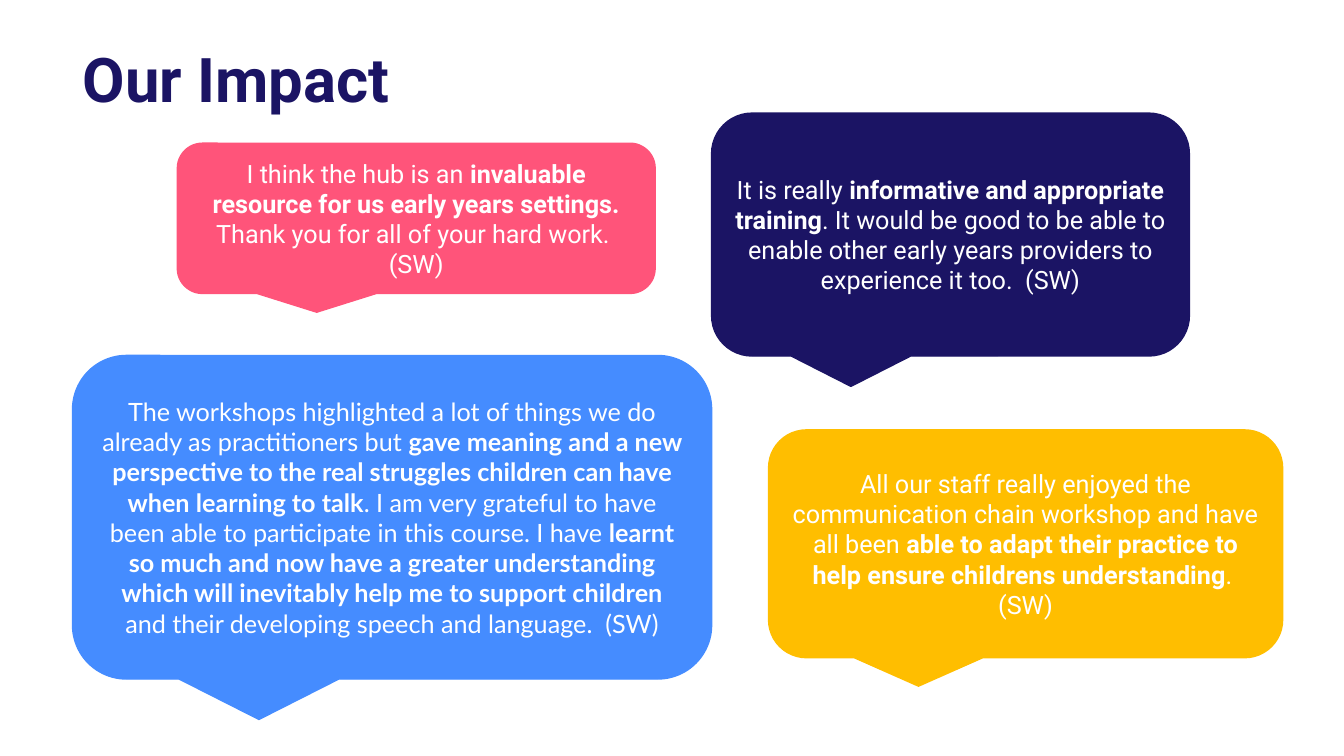
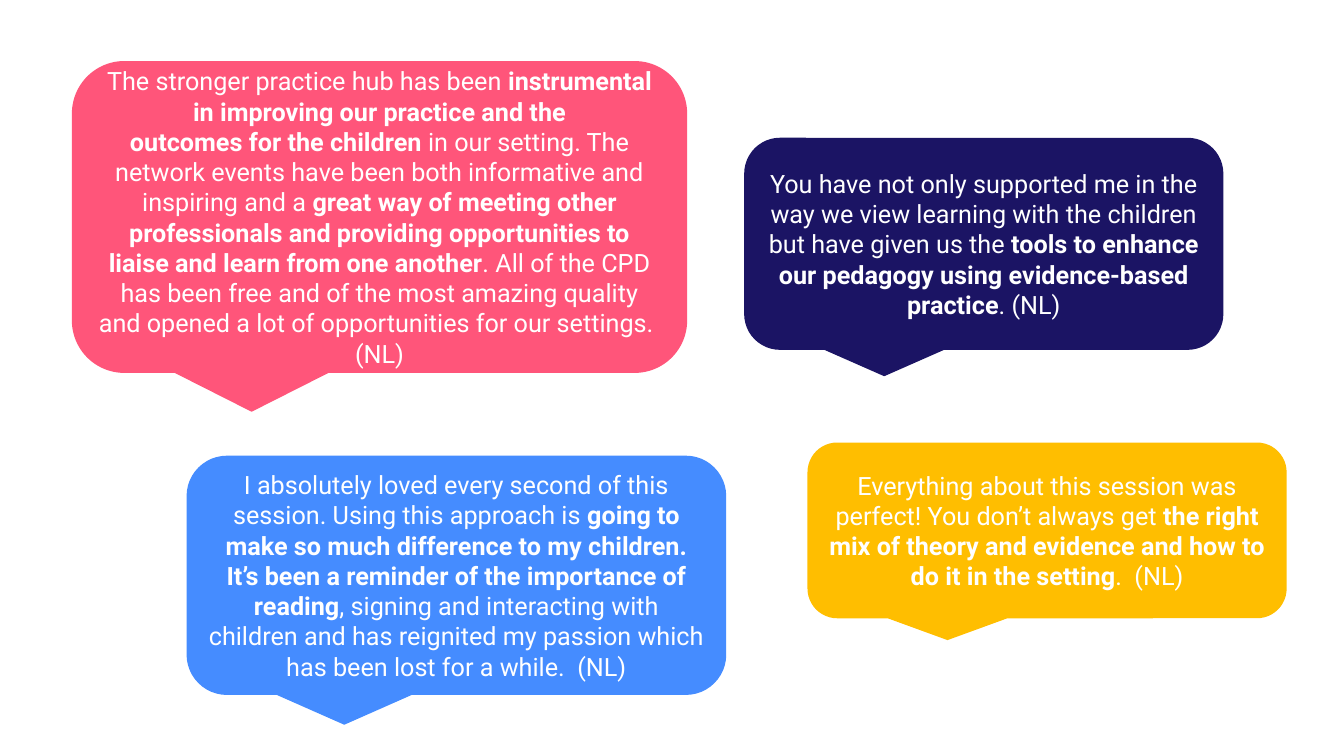
from pptx import Presentation
from pptx.dml.color import RGBColor
from pptx.enum import shapes, text
from pptx.util import Pt

NAVY = RGBColor(0x1B, 0x14, 0x64)
BLUE = RGBColor(0x45, 0x8C, 0xFF)
PINK = RGBColor(0xFF, 0x54, 0x7A)
ROSE = RGBColor(0xFF, 0x55, 0x7A)
YELLOW = RGBColor(0xFF, 0xBE, 0x00)
WHITE = RGBColor(0xFF, 0xFF, 0xFF)

LEFT = 51.84  # shared left margin
WIDTH = 341.28  # usual bubble width
TITLE_ONLY, BLANK = 5, 6
HARD_SPACE = chr(160)

TITLE_FORMAT = {"name": "Roboto", "size": Pt(44), "bold": True}
QUOTE_FORMAT = {"name": "Roboto", "size": Pt(18)}


def format_font(font, values, color):
    for key, value in values.items():
        setattr(font, key, value)
    font.color.rgb = color


def add_bubble(page, place, color, quote, **changes):
    """Add a speech bubble; *words* are bold and ~ is a non-breaking space."""
    bubble = page.shapes.add_shape(
        shapes.MSO_SHAPE.ROUNDED_RECTANGULAR_CALLOUT, *map(Pt, place))
    bubble.shadow.inherit = False
    bubble.fill.solid()
    bubble.fill.fore_color.rgb = color
    bubble.line.color.rgb = color
    bubble.line.width = Pt(1)
    frame = bubble.text_frame
    frame.word_wrap = True
    frame.vertical_anchor = text.MSO_ANCHOR.MIDDLE
    para = frame.paragraphs[0]
    para.alignment = text.PP_ALIGN.CENTER
    for number, words in enumerate(quote.replace("~", HARD_SPACE).split("*")):
        span = para.add_run()
        span.text = words
        values = {**QUOTE_FORMAT, "bold": number % 2 == 1, **changes}
        format_font(span.font, values, WHITE)


deck = Presentation()
deck.slide_width, deck.slide_height = Pt(960), Pt(540)

# Slide 1: title
page = deck.slides.add_slide(deck.slide_layouts[TITLE_ONLY])
title = page.shapes.title
title.left, title.top, title.width, title.height = map(Pt, (LEFT, 6.8, 833, 104.4))
title.text_frame.text = "Our Impact"
title.text_frame.auto_size = text.MSO_AUTO_SIZE.NONE
title.text_frame.vertical_anchor = text.MSO_ANCHOR.MIDDLE
para = title.text_frame.paragraphs[0]
para.alignment = text.PP_ALIGN.LEFT
para.line_spacing = 0.9
format_font(para.runs[0].font, TITLE_FORMAT, NAVY)

# Slide 1: quotes
add_bubble(
    page, (LEFT, 253.9, 456.48, 231.1), BLUE,
    "The workshops highlighted a lot of things we do already as practitioners but "
    "*gave meaning and a new perspective to the real struggles children can have "
    "when learning to talk*. I am very grateful to have been able to participate in "
    "this course. I have *learnt so much and now have a greater understanding which "
    "will inevitably help me to support children *and their developing speech and "
    "language.  (SW)", name="Lato")
add_bubble(
    page, (126.72, 102.3, WIDTH, 107.28), PINK,
    "I think the hub is an *invaluable resource for us early years settings.* "
    "Thank you for all of your hard work.  (SW)")
add_bubble(
    page, (549, 307.1, 367.2, 162.72), YELLOW,
    "All our staff really enjoyed the communication chain workshop and have all been "
    "*able to adapt their practice to help ensure childrens understanding*.  (SW)")
add_bubble(
    page, (508.32, 80.8, WIDTH, 173.52), NAVY,
    "It is really *informative and appropriate training*. It would be good to be able "
    "to enable other early years providers to experience it too.  (SW)")

# Slide 2: quotes
page = deck.slides.add_slide(deck.slide_layouts[BLANK])
add_bubble(
    page, (532.08, 98.9, WIDTH, 150.48), NAVY,
    "You have not only supported me in the way we view learning with the children but "
    "have given us the *tools to enhance our pedagogy using evidence-based practice*. "
    "(NL)")
add_bubble(
    page, (133.8, 326, 384.48, 169.92), BLUE,
    "I absolutely loved every second of this session. Using this approach is *going to "
    "make so much difference to my children. It’s been a reminder of the importance of "
    "reading*, signing and interacting with children and has reignited my passion which "
    "has been lost for a while.  (NL)")
add_bubble(
    page, (LEFT, 44.1, 438.48, 221.76), ROSE,
    "The stronger practice hub has been *instrumental in improving~our practice~and "
    "the outcomes~for~the children *in our setting. The network events have been both "
    "informative and inspiring and a *great way of meeting other professionals~and "
    "providing opportunities to liaise~and learn from one another*. All of the CPD "
    "has~been free and of the most amazing quality and opened a lot of "
    "opportunities~for~our settings.  (NL)")
add_bubble(
    page, (577.3, 316.6, WIDTH, 124.56), YELLOW,
    "Everything about this session was perfect! You don’t always get *the right mix of "
    "theory and evidence and how to do it in the setting*.  (NL)")

deck.save("out.pptx")
